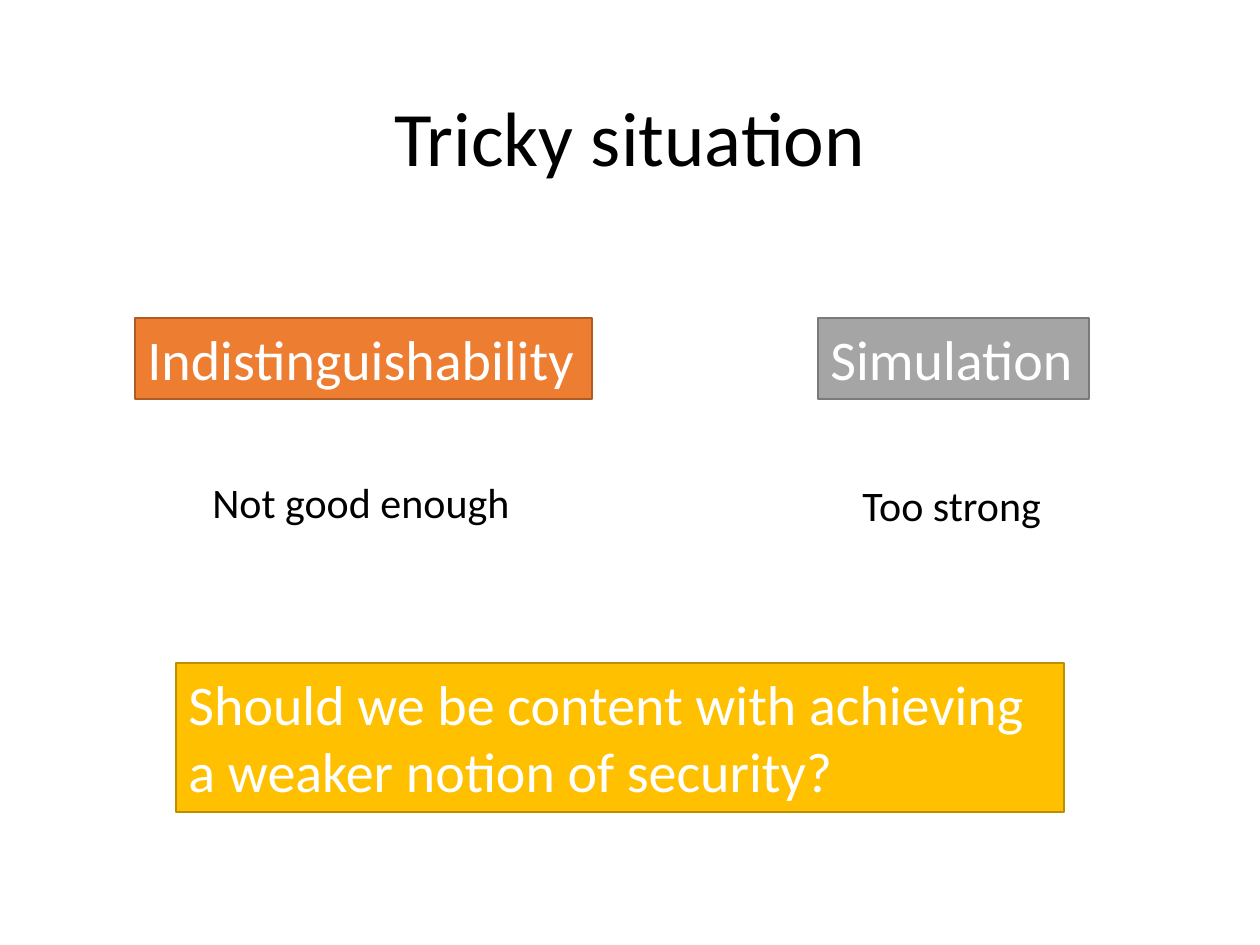
from dataclasses import dataclass

from pptx import Presentation
from pptx.dml.color import RGBColor
from pptx.enum.shapes import MSO_SHAPE as Shape
from pptx.enum.text import MSO_ANCHOR as Anchor, MSO_AUTO_SIZE as AutoSize, PP_ALIGN as Align
from pptx.util import Emu, Inches, Pt

PX_PER_INCH = 126


@dataclass(frozen=True)
class Theme:
    font: str = "Calibri"
    title_size: int = 44
    box_size: int = 32
    note_size: int = 24
    ink: str = "000000"
    paper: str = "FFFFFF"
    # (fill, outline) pairs
    orange: tuple = ("ED7D31", "AF5C24")
    grey: tuple = ("A5A5A5", "7A7A7A")
    gold: tuple = ("FFC000", "BD8E00")


def px(length):
    return Emu(round(length * Inches(1) / PX_PER_INCH))


def rgb(code):
    return RGBColor.from_string(code)


def write(frame, text, *, font, size, color, align=Align.LEFT, anchor=Anchor.TOP,
          wrap=True, auto_size=AutoSize.SHAPE_TO_FIT_TEXT, line_spacing=None):
    frame.word_wrap = wrap
    frame.auto_size = auto_size
    frame.vertical_anchor = anchor
    paragraph = frame.paragraphs[0]
    paragraph.alignment = align
    paragraph.line_spacing = line_spacing
    run = paragraph.add_run()
    run.text = text
    run.font.name = font
    run.font.size = Pt(size)
    run.font.color.rgb = rgb(color)


class SlideBuilder:
    def __init__(self, slide, theme):
        self.slide = slide
        self.theme = theme

    def title(self, text, left, top, width, height):
        heading = self.slide.shapes.title
        heading.left, heading.top = px(left), px(top)
        heading.width, heading.height = px(width), px(height)
        write(heading.text_frame, text, font=self.theme.font, size=self.theme.title_size,
              color=self.theme.ink, align=Align.CENTER, anchor=Anchor.MIDDLE,
              auto_size=AutoSize.NONE, line_spacing=0.9)

    def box(self, text, left, top, width, height, colors, wrap=False):
        fill, outline = colors
        panel = self.slide.shapes.add_shape(
            Shape.RECTANGLE, px(left), px(top), px(width), px(height))
        panel.shadow.inherit = False
        panel.fill.solid()
        panel.fill.fore_color.rgb = rgb(fill)
        panel.line.color.rgb = rgb(outline)
        panel.line.width = Pt(1)
        write(panel.text_frame, text, font=self.theme.font, size=self.theme.box_size,
              color=self.theme.paper, wrap=wrap)

    def note(self, text, left, top, width, height):
        caption = self.slide.shapes.add_textbox(px(left), px(top), px(width), px(height))
        write(caption.text_frame, text, font=self.theme.font, size=self.theme.note_size,
              color=self.theme.ink, wrap=False)


def main():
    deck = Presentation()
    deck.slide_width, deck.slide_height = Inches(10), Inches(7.5)
    title_only = deck.slide_layouts[5]
    theme = Theme()
    builder = SlideBuilder(deck.slides.add_slide(title_only), theme)

    builder.title("Tricky situation", 87, 50, 1086, 183)
    builder.box("Indistinguishability", 135, 318, 457, 81, theme.orange)
    builder.box("Simulation", 818, 318, 271, 81, theme.grey)
    builder.note("Not good enough", 200, 470, 325, 63)
    builder.note("Too strong", 850, 473, 205, 63)
    builder.box("Should we be content with achieving a weaker notion of security?",
                176, 663, 888, 149, theme.gold, wrap=True)

    deck.save("out.pptx")


if __name__ == "__main__":
    main()
